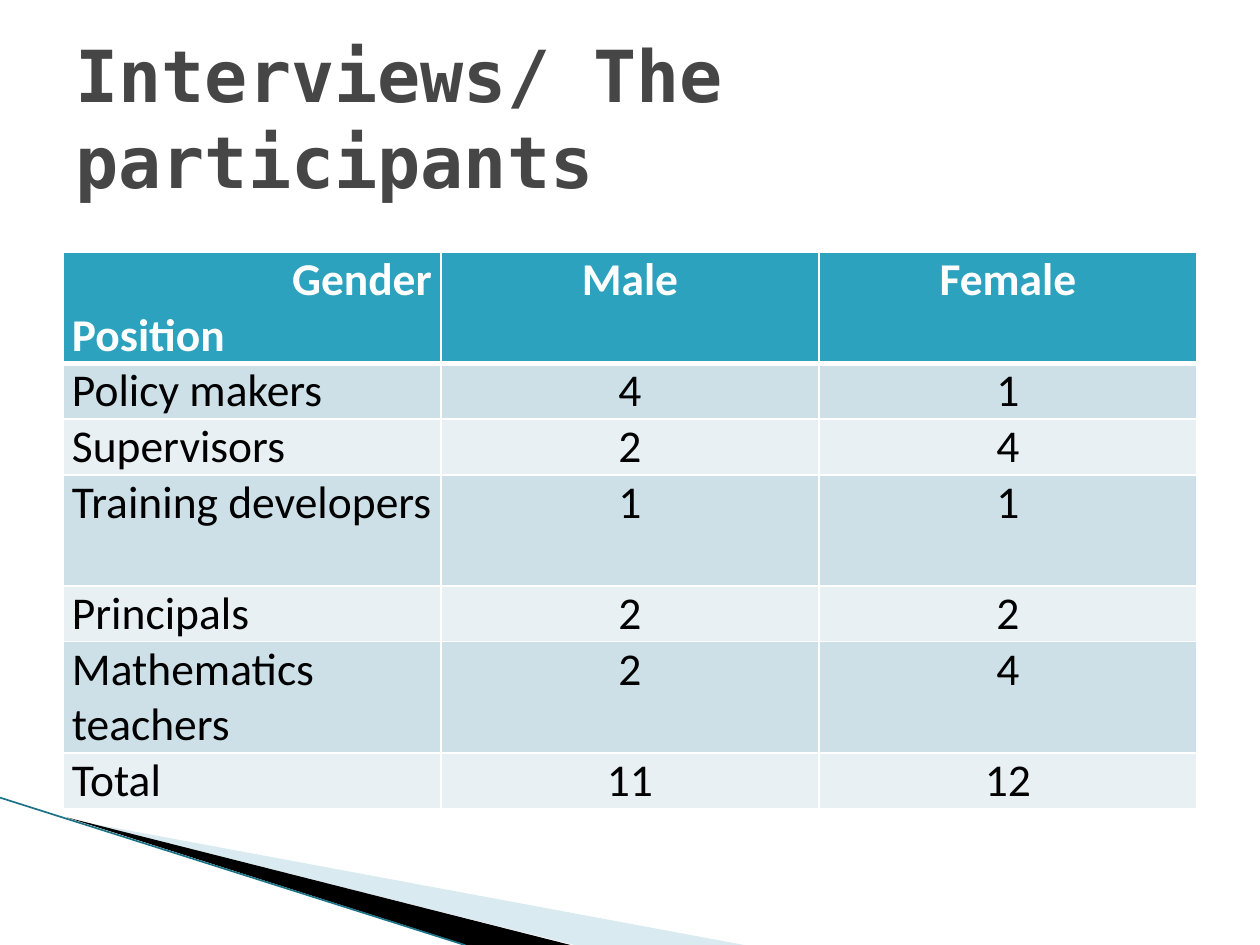
from dataclasses import dataclass

from lxml import etree
from pptx import Presentation
from pptx.dml.color import RGBColor
from pptx.enum.shapes import MSO_CONNECTOR
from pptx.enum.text import MSO_ANCHOR, PP_ALIGN
from pptx.oxml.ns import qn
from pptx.util import Cm, Pt

LEFT, CENTER, RIGHT = PP_ALIGN.LEFT, PP_ALIGN.CENTER, PP_ALIGN.RIGHT
MIDDLE = MSO_ANCHOR.MIDDLE
STRAIGHT = MSO_CONNECTOR.STRAIGHT


@dataclass(frozen=True)
class Theme:
    title_font: str = "DejaVu Sans Mono"
    table_font: str = "Calibri"
    title_size: int = 41
    table_size: int = 26
    title: str = "464646"
    header: str = "2DA2BF"
    bands: tuple = ("CDE0E8", "E8F0F4")
    white: str = "FFFFFF"
    black: str = "000000"
    pale_wedge: str = "A0CBDC"
    edge: str = "1C7286"


THEME = Theme()
LINE_HEIGHT = 1.12
HEADINGS = ["Male", "Female"]
PARTICIPANTS = [
    ("Policy makers", 4, 1),
    ("Supervisors", 2, 4),
    ("Training developers", 1, 1),
    ("Principals", 2, 2),
    ("Mathematics teachers", 2, 4),
    ("Total", 11, 12),
]
TWO_LINE_ROWS = {"Training developers", "Mathematics teachers"}


def write(para, text, *, font, size, color, bold=False, align=LEFT):
    para.alignment = align
    span = para.add_run()
    span.text = text
    span.font.name = font
    span.font.size = Pt(size)
    span.font.bold = bold
    span.font.color.rgb = RGBColor.from_string(color)


def add_title(page, text):
    box = page.shapes.add_textbox(Cm(1.27), Cm(0.76), Cm(22.86), Cm(3.18))
    frame = box.text_frame
    frame.word_wrap = True
    frame.vertical_anchor = MIDDLE
    write(frame.paragraphs[0], text, font=THEME.title_font,
          size=THEME.title_size, color=THEME.title, bold=True)


def add_wedge(page, points, color, opacity=100):
    """Draw a borderless polygon from points in centimetres."""
    corners = [(Cm(x), Cm(y)) for x, y in points]
    builder = page.shapes.build_freeform(*corners[0])
    builder.add_line_segments(corners[1:], close=True)
    wedge = builder.convert_to_shape()
    wedge.shadow.inherit = False
    wedge.line.fill.background()
    wedge.fill.solid()
    wedge.fill.fore_color.rgb = RGBColor.from_string(color)
    if opacity < 100:
        paint = next(wedge.element.spPr.iter(qn("a:srgbClr")))
        etree.SubElement(paint, qn("a:alpha"), val=str(opacity * 1000))


def add_edge(page, start, end):
    edge = page.shapes.add_connector(STRAIGHT, *map(Cm, start + end))
    edge.line.color.rgb = RGBColor.from_string(THEME.edge)
    edge.line.width = Pt(0.95)
    etree.SubElement(edge.element.spPr, qn("a:effectLst"))


def set_borders(cell, bottom=1, top=1):
    """Give a cell white borders; they must stand before its fill."""
    properties = cell._tc.get_or_add_tcPr()
    widths = {"lnL": 1, "lnR": 1, "lnT": top, "lnB": bottom}
    for index, (side, width) in enumerate(widths.items()):
        border = etree.Element(qn(f"a:{side}"), w=str(Pt(width)))
        fill = etree.SubElement(border, qn("a:solidFill"))
        etree.SubElement(fill, qn("a:srgbClr"), val=THEME.white)
        properties.insert(index, border)


def fill_cell(cell, lines, fill, *, color, bold=False, bottom=1, top=1):
    """Write (text, alignment) lines into a cell and style it."""
    cell.margin_left = cell.margin_right = Cm(0.18)
    cell.margin_top = cell.margin_bottom = 0
    cell.fill.solid()
    cell.fill.fore_color.rgb = RGBColor.from_string(fill)
    set_borders(cell, bottom, top)
    frame = cell.text_frame
    for index, (text, align) in enumerate(lines):
        para = frame.add_paragraph() if index else frame.paragraphs[0]
        write(para, text, font=THEME.table_font, size=THEME.table_size,
              color=color, bold=bold, align=align)


def add_participants(page):
    heights = [2 * LINE_HEIGHT] + [
        LINE_HEIGHT * (2 if position in TWO_LINE_ROWS else 1)
        for position, *_ in PARTICIPANTS
    ]
    table = page.shapes.add_table(
        len(heights), 3, Cm(1.27), Cm(5.08), Cm(22.86), Cm(sum(heights))).table
    for row, height in zip(table.rows, heights):
        row.height = Cm(height)

    header = [[("Gender", RIGHT), ("Position", LEFT)]]
    header += [[(heading, CENTER)] for heading in HEADINGS]
    for column, lines in enumerate(header):
        fill_cell(table.cell(0, column), lines, THEME.header,
                  color=THEME.white, bold=True, bottom=3)

    for row, (position, *counts) in enumerate(PARTICIPANTS, start=1):
        body = [(position, LEFT)] + [(str(count), CENTER) for count in counts]
        for column, line in enumerate(body):
            fill_cell(table.cell(row, column), [line], THEME.bands[(row - 1) % 2],
                      color=THEME.black, top=3 if row == 1 else 1)


def main():
    deck = Presentation()
    deck.slide_width, deck.slide_height = Cm(25.4), Cm(19.05)
    page = deck.slides.add_slide(deck.slide_layouts[6])
    add_wedge(page, [(1.4, 16.52), (15.0, 19.05), (11.58, 19.05)],
              THEME.pale_wedge, opacity=40)
    add_wedge(page, [(1.35, 16.48), (11.5, 19.05), (9.4, 19.05)], THEME.black)
    add_edge(page, (0, 16.08), (9.37, 19.05))
    add_participants(page)
    add_title(page, "Interviews/ The participants")
    deck.save("out.pptx")


if __name__ == "__main__":
    main()
